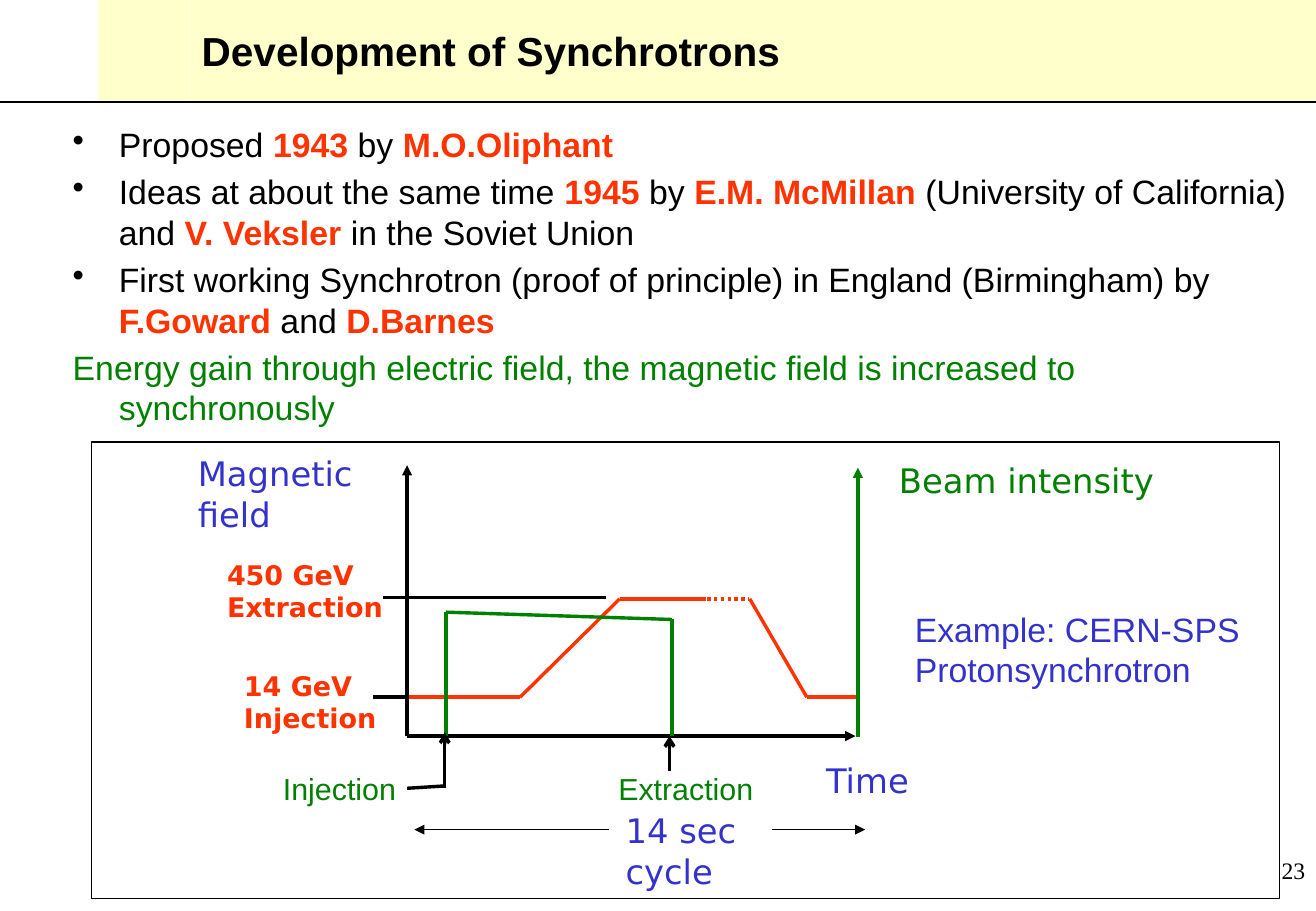
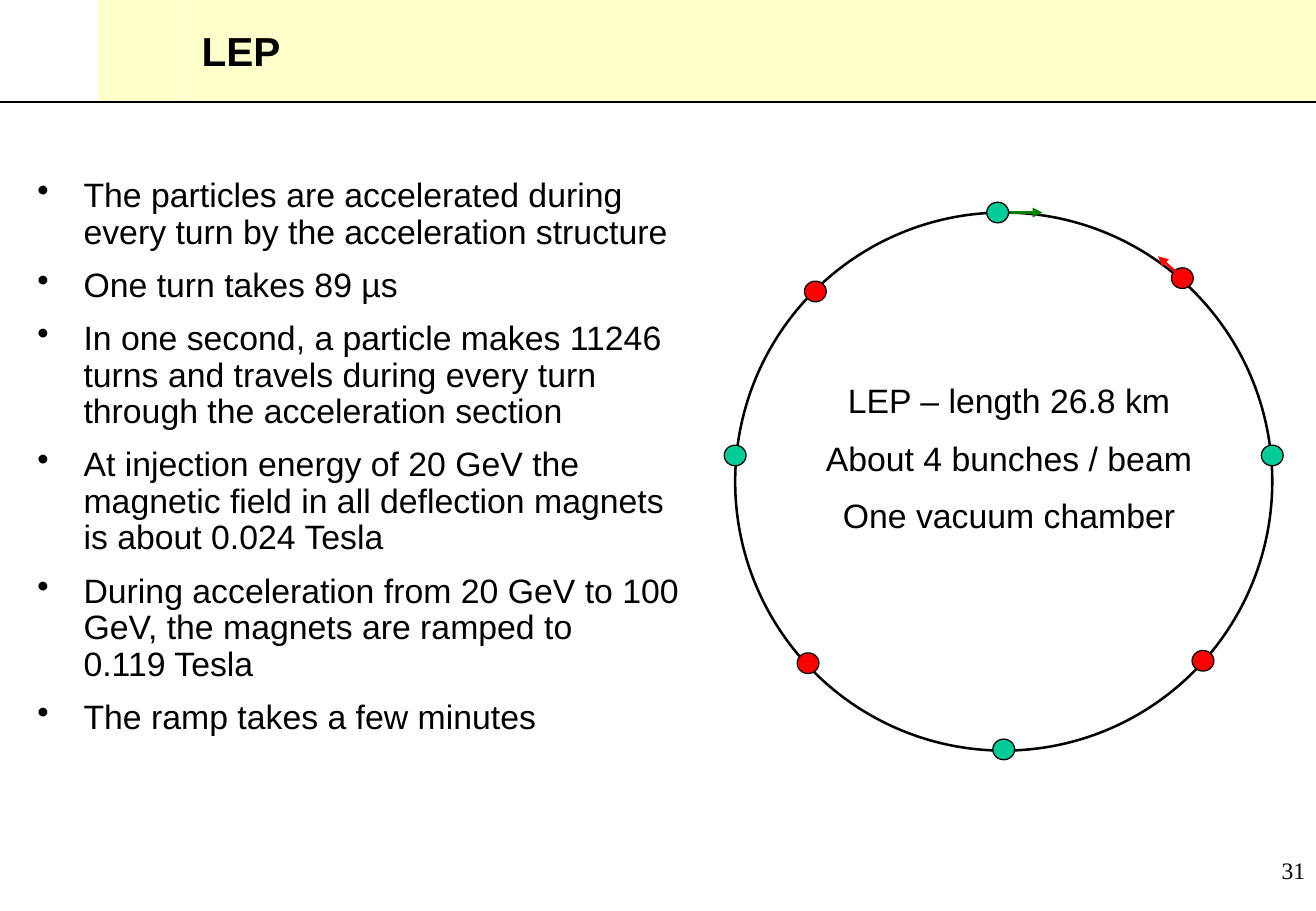
from dataclasses import dataclass
from itertools import pairwise
from typing import Optional

from lxml.etree import SubElement
from pptx import Presentation
from pptx.dml.color import RGBColor
from pptx.enum.dml import MSO_LINE
from pptx.enum.shapes import MSO_CONNECTOR, MSO_SHAPE
from pptx.enum.text import MSO_ANCHOR, PP_ALIGN
from pptx.oxml.ns import qn
from pptx.util import Inches, Pt

BLACK = RGBColor(0x00, 0x00, 0x00)
CREAM = RGBColor(0xFF, 0xFF, 0xCC)
ORANGE = RGBColor(0xFF, 0x33, 0x00)
GREEN = RGBColor(0x00, 0x80, 0x00)
BLUE = RGBColor(0x33, 0x33, 0xCC)
TEAL = RGBColor(0x00, 0xCC, 0x99)
RED = RGBColor(0xFF, 0x00, 0x00)

SANS = "Arial"
WIDE = "DejaVu Sans"
SERIF = "Times New Roman"

SLIDE_WIDTH = 10.83
TITLE_LEFT = 1.56
BAND_LEFT = 0.81
BAND_HEIGHT = 0.83
RULE_Y = 0.84
HANG = 0.38
BUNCH_WIDTH, BUNCH_HEIGHT = 0.18, 0.17


@dataclass(frozen=True)
class Label:
    text: str
    left: float
    top: float
    width: float
    height: float
    color: RGBColor
    size: int = 20
    font: str = SANS
    bold: bool = False


@dataclass(frozen=True)
class Stroke:
    start: tuple[float, float]
    end: tuple[float, float]
    color: RGBColor = BLACK
    width: float = 2
    arrow: Optional[str] = None
    dash: Optional[MSO_LINE] = None


FIELD_LABELS = (
    Label("Time", 6.7, 6.21, 0.95, 0.44, BLUE, font=WIDE),
    Label("Magnetic field", 1.53, 3.68, 1.7, 0.77, BLUE, font=WIDE),
    Label("14 GeV\nInjection", 1.91, 5.46, 1.4, 0.64, ORANGE, 16, WIDE, True),
    Label("450 GeV\nExtraction", 1.77, 4.55, 1.55, 0.64, ORANGE, 16, WIDE, True),
    Label("14 sec\ncycle", 5.05, 6.62, 1.2, 0.77, BLUE, font=WIDE),
    Label("Example: CERN-SPS\nProtonsynchrotron", 7.43, 4.96, 3, 0.77, BLUE),
    Label("Injection", 2.23, 6.29, 1.2, 0.4, GREEN, 18),
    Label("Beam intensity", 7.3, 3.74, 2.4, 0.44, GREEN, font=WIDE),
    Label("Extraction", 4.99, 6.29, 1.4, 0.4, GREEN, 18),
)

RAMP_UP = ((3.35, 5.74), (4.28, 5.74), (5.1, 4.93), (5.81, 4.93))
RAMP_DOWN = ((6.17, 4.93), (6.64, 5.74), (7.06, 5.74))
BEAM_PULSE = ((3.67, 6.06), (3.67, 5.04), (5.53, 5.1), (5.53, 6.06))

FIELD_STROKES = (
    Stroke((3.35, 6.06), (3.35, 3.83), arrow="triangle"),
    Stroke((3.35, 6.06), (7.04, 6.06), arrow="triangle"),
    *(Stroke(*ends, ORANGE) for ends in pairwise(RAMP_UP)),
    Stroke((5.82, 4.93), (6.16, 4.93), ORANGE, dash=MSO_LINE.ROUND_DOT),
    *(Stroke(*ends, ORANGE) for ends in pairwise(RAMP_DOWN)),
    Stroke((4.99, 4.92), (3.15, 4.92)),
    Stroke((3.37, 5.74), (3.07, 5.74)),
    *(Stroke(*ends, GREEN) for ends in pairwise(BEAM_PULSE)),
    Stroke((6.35, 6.83), (7.12, 6.83), width=0.75, arrow="triangle"),
    Stroke((5.01, 6.83), (3.41, 6.83), width=0.75, arrow="triangle"),
    Stroke((7.06, 6.07), (7.06, 3.85), GREEN, arrow="triangle"),
    Stroke((3.67, 6.47), (3.35, 6.49)),
    Stroke((3.66, 6.49), (3.66, 6.03), arrow="arrow"),
    Stroke((5.51, 6.35), (5.51, 6.06), arrow="arrow"),
)

HISTORY = (
    "Proposed *1943* by *M.O.Oliphant*",
    "Ideas at about the same time *1945* by *E.M. McMillan* "
    "(University of California) and *V. Veksler* in the Soviet Union",
    "First working Synchrotron (proof of principle) in England (Birmingham) by "
    "*F.Goward *and *D.Barnes*",
)
ENERGY_GAIN = (
    "Energy gain through electric field, the magnetic field is increased to "
    "synchronously"
)

LEP_FACTS = (
    "The particles are accelerated during every turn by the acceleration structure",
    "One turn takes 89 µs",
    "In one second, a particle makes 11246 turns and travels during every turn "
    "through the acceleration section",
    "At injection energy of 20 GeV the magnetic field in all deflection magnets "
    "is about 0.024 Tesla",
    "During acceleration from 20 GeV to 100 GeV, the magnets are ramped to\n0.119 Tesla",
    "The ramp takes a few minutes",
)
RING_FACTS = ("LEP – length 26.8 km", "About 4 bunches / beam", "One vacuum chamber")

BUNCHES = {
    TEAL: ((8.21, 1.75), (8.26, 6.17), (10.47, 3.75), (6.05, 3.75)),
    RED: ((6.71, 2.4), (9.9, 5.44), (9.73, 2.29), (6.65, 5.46)),
}
BUNCH_ARROWS = (
    Stroke((8.31, 1.75), (8.58, 1.75), GREEN, 1.5, "triangle"),
    Stroke((9.71, 2.27), (9.53, 2.11), RED, 1.5, "triangle"),
)


def write(frame, text: str, *, size: float = 20, font: str = SANS,
          color: RGBColor = BLACK, bold: bool = False, align=PP_ALIGN.LEFT,
          before: float = 0, spacing: Optional[float] = None,
          hanging: bool = False, bullet: bool = False) -> None:
    first = frame.paragraphs[0]
    is_first = not first.runs
    paragraph = first if is_first else frame.add_paragraph()
    properties = paragraph._p.get_or_add_pPr()
    if hanging:
        properties.set("marL", str(Inches(HANG)))
        properties.set("indent", str(-Inches(HANG)))
    if bullet:
        SubElement(properties, qn("a:buChar")).set("char", "•")
    paragraph.alignment = align
    paragraph.space_before = Pt(0 if is_first else before)
    if spacing:
        paragraph.line_spacing = spacing
    for index, part in enumerate(text.split("*")):
        emphasis = index % 2 == 1
        for row, piece in enumerate(part.split("\n")):
            if row:
                paragraph.add_line_break()
            if not piece:
                continue
            run = paragraph.add_run()
            run.text = piece
            run.font.size = Pt(size)
            run.font.name = font
            run.font.bold = bold or emphasis
            run.font.color.rgb = ORANGE if emphasis else color


def add_frame(slide, left: float, top: float, width: float, height: float):
    frame = slide.shapes.add_textbox(
        Inches(left), Inches(top), Inches(width), Inches(height)).text_frame
    frame.word_wrap = True
    return frame


def add_label(slide, label: Label) -> None:
    frame = add_frame(slide, label.left, label.top, label.width, label.height)
    for line in label.text.split("\n"):
        write(frame, line, size=label.size, font=label.font,
              color=label.color, bold=label.bold)


def add_stroke(slide, stroke: Stroke) -> None:
    connector = slide.shapes.add_connector(
        MSO_CONNECTOR.STRAIGHT, *map(Inches, stroke.start + stroke.end))
    line = connector.line
    line.color.rgb = stroke.color
    line.width = Pt(stroke.width)
    if stroke.dash:
        line.dash_style = stroke.dash
    if stroke.arrow:
        SubElement(line._get_or_add_ln(), qn("a:tailEnd")).set("type", stroke.arrow)
    SubElement(connector._element.spPr, qn("a:effectLst"))


def add_figure(slide, preset, left: float, top: float, width: float, height: float,
               *, fill: Optional[RGBColor] = None, outline: float = 0) -> None:
    figure = slide.shapes.add_shape(
        preset, Inches(left), Inches(top), Inches(width), Inches(height))
    figure.shadow.inherit = False
    if fill is None:
        figure.fill.background()
    else:
        figure.fill.solid()
        figure.fill.fore_color.rgb = fill
    if outline:
        figure.line.color.rgb = BLACK
        figure.line.width = Pt(outline)
    else:
        figure.line.fill.background()


def add_base(deck, heading: str, number: int):
    slide = deck.slides.add_slide(deck.slide_layouts[5])
    add_figure(slide, MSO_SHAPE.RECTANGLE, BAND_LEFT, 0, TITLE_LEFT - BAND_LEFT,
               BAND_HEIGHT, fill=CREAM)
    add_stroke(slide, Stroke((0, RULE_Y), (SLIDE_WIDTH, RULE_Y), width=0.75))
    write(add_frame(slide, 8.58, 7, 2.26, 0.5), str(number),
          size=14, font=SERIF, align=PP_ALIGN.RIGHT)
    title = slide.shapes.title
    title.left, title.top = Inches(TITLE_LEFT), Inches(0)
    title.width, title.height = Inches(SLIDE_WIDTH - TITLE_LEFT), Inches(BAND_HEIGHT)
    title.fill.solid()
    title.fill.fore_color.rgb = CREAM
    title.text_frame.vertical_anchor = MSO_ANCHOR.MIDDLE
    write(title.text_frame, heading, size=24, bold=True)
    return slide


def build_synchrotrons(deck) -> None:
    slide = add_base(deck, "Development of Synchrotrons", 23)
    history = add_frame(slide, 0.5, 0.97, 10.19, 2.85)
    for entry in HISTORY:
        write(history, entry, before=4, hanging=True, bullet=True)
    write(history, ENERGY_GAIN, color=GREEN, before=4, hanging=True)
    add_figure(slide, MSO_SHAPE.RECTANGLE, 0.75, 3.64, 9.78, 3.76, outline=0.75)
    for stroke in FIELD_STROKES:
        add_stroke(slide, stroke)
    for label in FIELD_LABELS:
        add_label(slide, label)


def build_lep(deck) -> None:
    slide = add_base(deck, "LEP", 31)
    facts = add_frame(slide, 0.21, 1.42, 5.57, 4.88)
    for fact in LEP_FACTS:
        write(facts, fact, before=10, spacing=0.9, hanging=True, bullet=True)
    add_figure(slide, MSO_SHAPE.OVAL, 6.05, 1.75, 4.42, 4.43, outline=1.5)
    for color, centers in BUNCHES.items():
        for x, y in centers:
            add_figure(slide, MSO_SHAPE.OVAL, x - BUNCH_WIDTH / 2, y - BUNCH_HEIGHT / 2,
                       BUNCH_WIDTH, BUNCH_HEIGHT, fill=color, outline=0.75)
    for arrow in BUNCH_ARROWS:
        add_stroke(slide, arrow)
    ring_facts = add_frame(slide, 6.59, 3.08, 3.43, 1.45)
    for fact in RING_FACTS:
        write(ring_facts, fact, before=10, align=PP_ALIGN.CENTER)


def main() -> None:
    deck = Presentation()
    deck.slide_width, deck.slide_height = Inches(SLIDE_WIDTH), Inches(7.5)
    build_synchrotrons(deck)
    build_lep(deck)
    deck.save("out.pptx")


if __name__ == "__main__":
    main()
